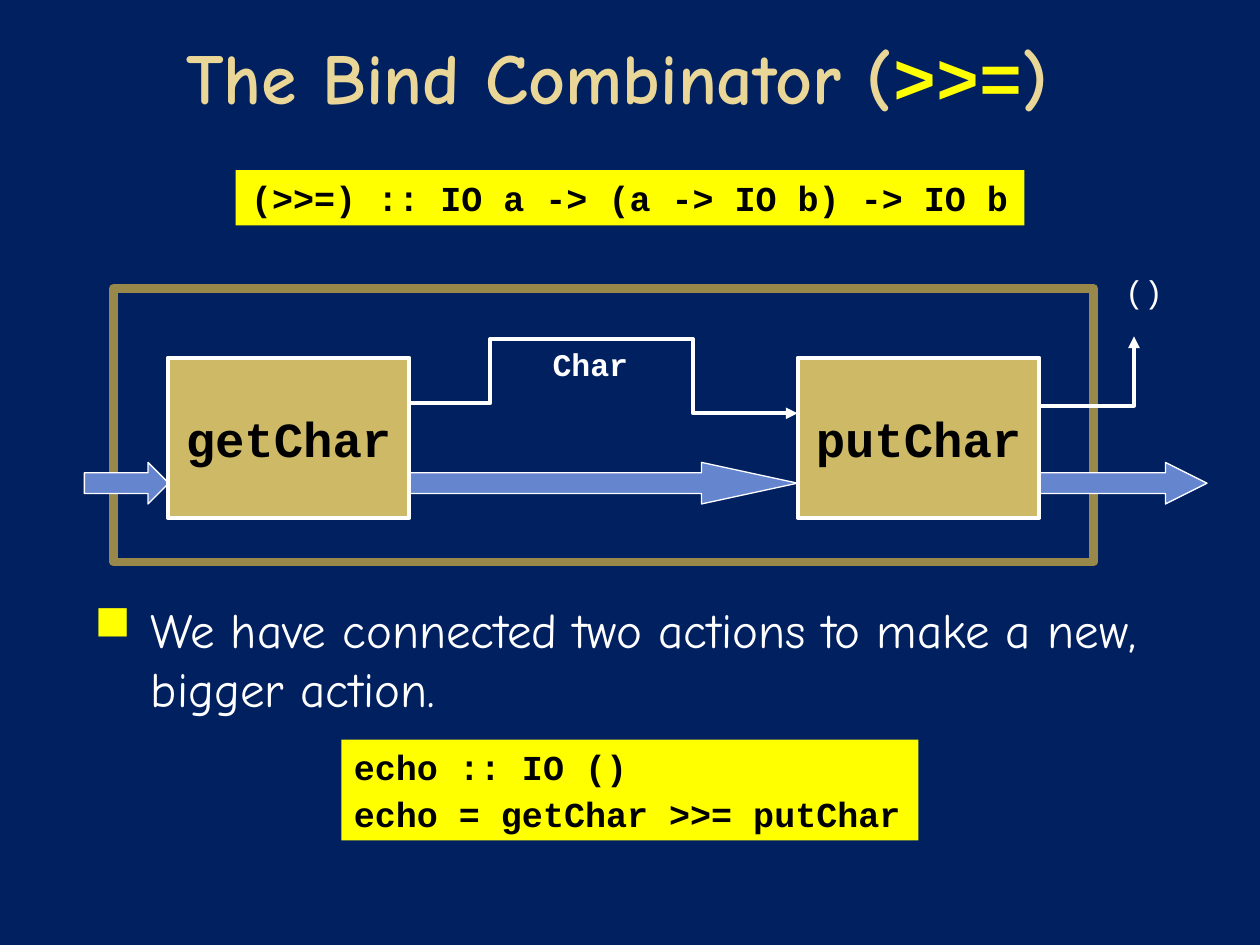
"""Build a slide that explains the bind combinator with a diagram of two joined actions."""
from lxml import etree
from pptx import Presentation
from pptx.dml.color import RGBColor
from pptx.enum.shapes import MSO_SHAPE as Shape
from pptx.enum.text import MSO_ANCHOR as Anchor, PP_ALIGN as Align
from pptx.oxml.ns import qn
from pptx.util import Inches, Pt

COLORS = {
    "navy": "002060", "sand": "EAD696", "yellow": "FFFF00", "white": "FFFFFF",
    "black": "000000", "gold": "CEB966", "bronze": "98894B", "blue": "6585CF",
}
SANS, MONO = "Comic Neue", "Courier New"


def paint(shape, fill=None, line=None, width=0):
    shape.shadow.inherit = False
    if fill:
        shape.fill.solid()
        shape.fill.fore_color.rgb = RGBColor.from_string(COLORS[fill])
    else:
        shape.fill.background()
    if line:
        shape.line.color.rgb = RGBColor.from_string(COLORS[line])
        shape.line.width = Pt(width)
    else:
        shape.line.fill.background()


def write(shape, lines, align=Align.LEFT, anchor=Anchor.TOP, wrap=False, before=0):
    frame = shape.text_frame
    frame.word_wrap = wrap
    frame.vertical_anchor = anchor
    for index, spans in enumerate(lines):
        para = frame.paragraphs[0] if index == 0 else frame.add_paragraph()
        para.alignment = align
        para.space_before = Pt(before)
        for text, size, font, color, bold in spans:
            span = para.add_run()
            span.text = text
            span.font.size = Pt(size)
            span.font.name = font
            span.font.bold = bold
            span.font.color.rgb = RGBColor.from_string(COLORS[color])


deck = Presentation()
deck.slide_width, deck.slide_height = Inches(10), Inches(7.5)
page = deck.slides.add_slide(deck.slide_layouts[6])
page.background.fill.solid()
page.background.fill.fore_color.rgb = RGBColor.from_string(COLORS["navy"])
shapes = page.shapes

title = shapes.add_textbox(Inches(0.5), Inches(0.16), Inches(9), Inches(0.88))
write(title, [[
    ("The Bind Combinator (", 41, SANS, "sand", True),
    (">>=", 41, MONO, "yellow", True),
    (") ", 41, SANS, "sand", True),
]], Align.CENTER, Anchor.MIDDLE, wrap=True)

body = shapes.add_textbox(Inches(0.5), Inches(4.71), Inches(9), Inches(1.1))
write(body, [[("We have connected two actions to make a new, bigger action.",
               28, SANS, "white", False)]], wrap=True)
properties = body.text_frame.paragraphs[0]._p.get_or_add_pPr()
properties.set("marL", str(Inches(0.6)))
properties.set("indent", str(Inches(-0.45)))
bullet_color = etree.SubElement(properties, qn("a:buClr"))
etree.SubElement(bullet_color, qn("a:srgbClr"), val=COLORS["yellow"])
etree.SubElement(properties, qn("a:buChar"), char="■")

frame_box = shapes.add_shape(Shape.RECTANGLE, Inches(0.9), Inches(2.29), Inches(7.78), Inches(2.17))
paint(frame_box, line="bronze", width=5)

for left, width, head in [(0.67, 0.67, 0.5), (3.25, 3.08, 2.31), (8.25, 1.33, 1)]:
    arrow = shapes.add_shape(Shape.RIGHT_ARROW, Inches(left), Inches(3.67), Inches(width), Inches(0.33))
    arrow.adjustments[0] = 0.5
    arrow.adjustments[1] = head
    paint(arrow, "blue", "white", 0.75)

result_path = [(8.25, 3.22), (9, 3.22), (9, 2.67)]
char_path = [(3.2, 3.2), (3.89, 3.2), (3.89, 2.69), (5.5, 2.69), (5.5, 3.28), (6.33, 3.28)]
for points in (result_path, char_path):
    (start_x, start_y), *rest = [(Inches(x), Inches(y)) for x, y in points]
    builder = shapes.build_freeform(start_x, start_y)
    builder.add_line_segments(rest, close=False)
    wire = builder.convert_to_shape()
    paint(wire, line="white", width=2.25)
    etree.SubElement(wire.line._get_or_add_ln(), qn("a:tailEnd"), type="triangle")

for name, left in [("getChar", 1.33), ("putChar", 6.33)]:
    action = shapes.add_shape(Shape.RECTANGLE, Inches(left), Inches(2.84), Inches(1.92), Inches(1.27))
    paint(action, "gold", "white", 2.25)
    write(action, [[(name, 28, MONO, "black", True)]], Align.CENTER, Anchor.MIDDLE)

for name, left, top, width, bold in [("()", 8.83, 2.11, 0.5, False), ("Char", 4.28, 2.69, 0.81, True)]:
    label = shapes.add_textbox(Inches(left), Inches(top), Inches(width), Inches(0.4))
    write(label, [[(name, 18, MONO, "white", bold)]], Align.CENTER)

for left, top, width, height, align, lines in [
    (1.87, 1.35, 6.26, 0.44, Align.CENTER, ["(>>=) :: IO a -> (a -> IO b) -> IO b"]),
    (2.71, 5.87, 4.58, 0.8, Align.LEFT, ["echo :: IO ()", "echo = getChar >>= putChar"]),
]:
    code = shapes.add_shape(Shape.RECTANGLE, Inches(left), Inches(top), Inches(width), Inches(height))
    paint(code, "yellow")
    write(code, [[(line, 20, MONO, "black", True)] for line in lines], align, before=2.4)

deck.save("out.pptx")
